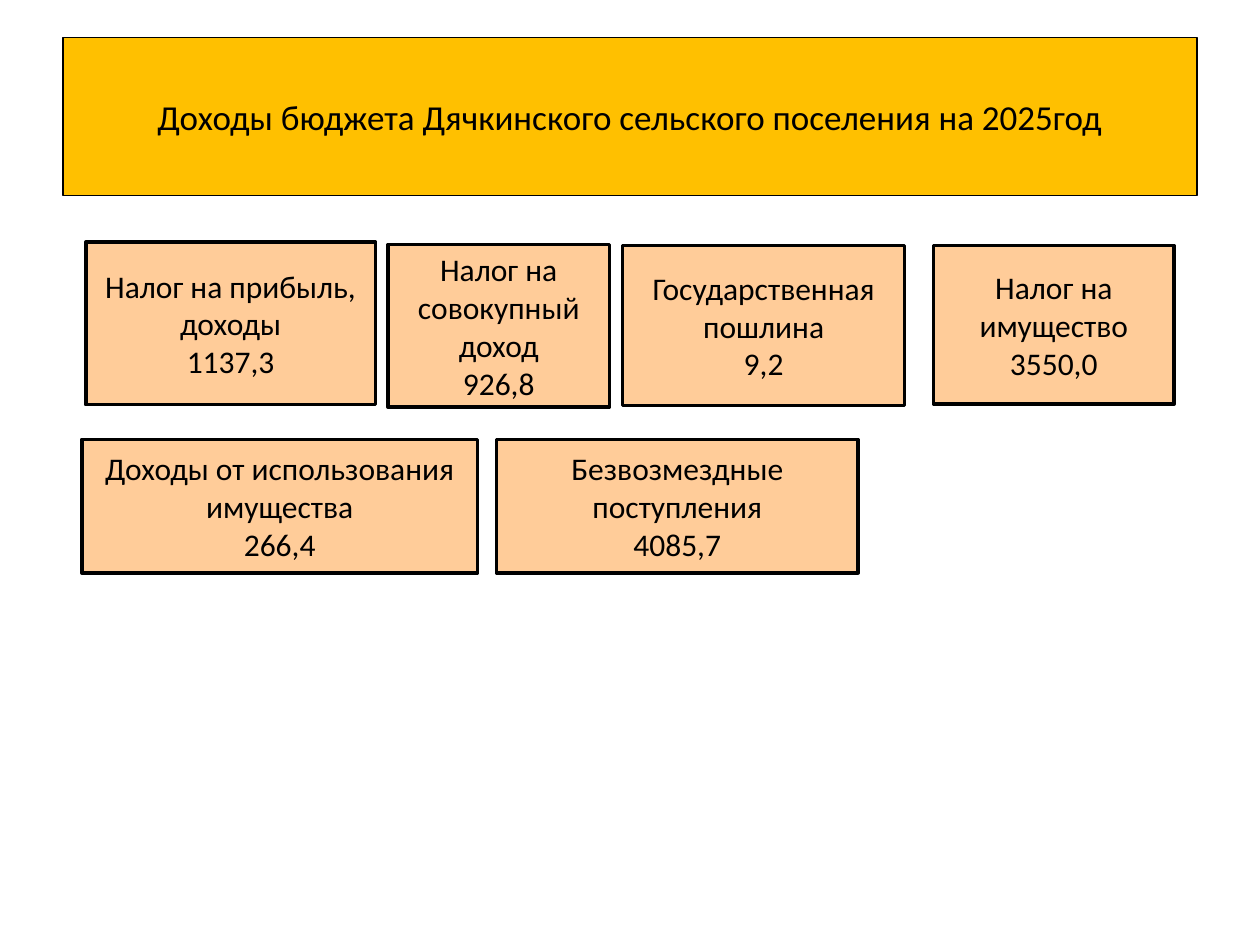
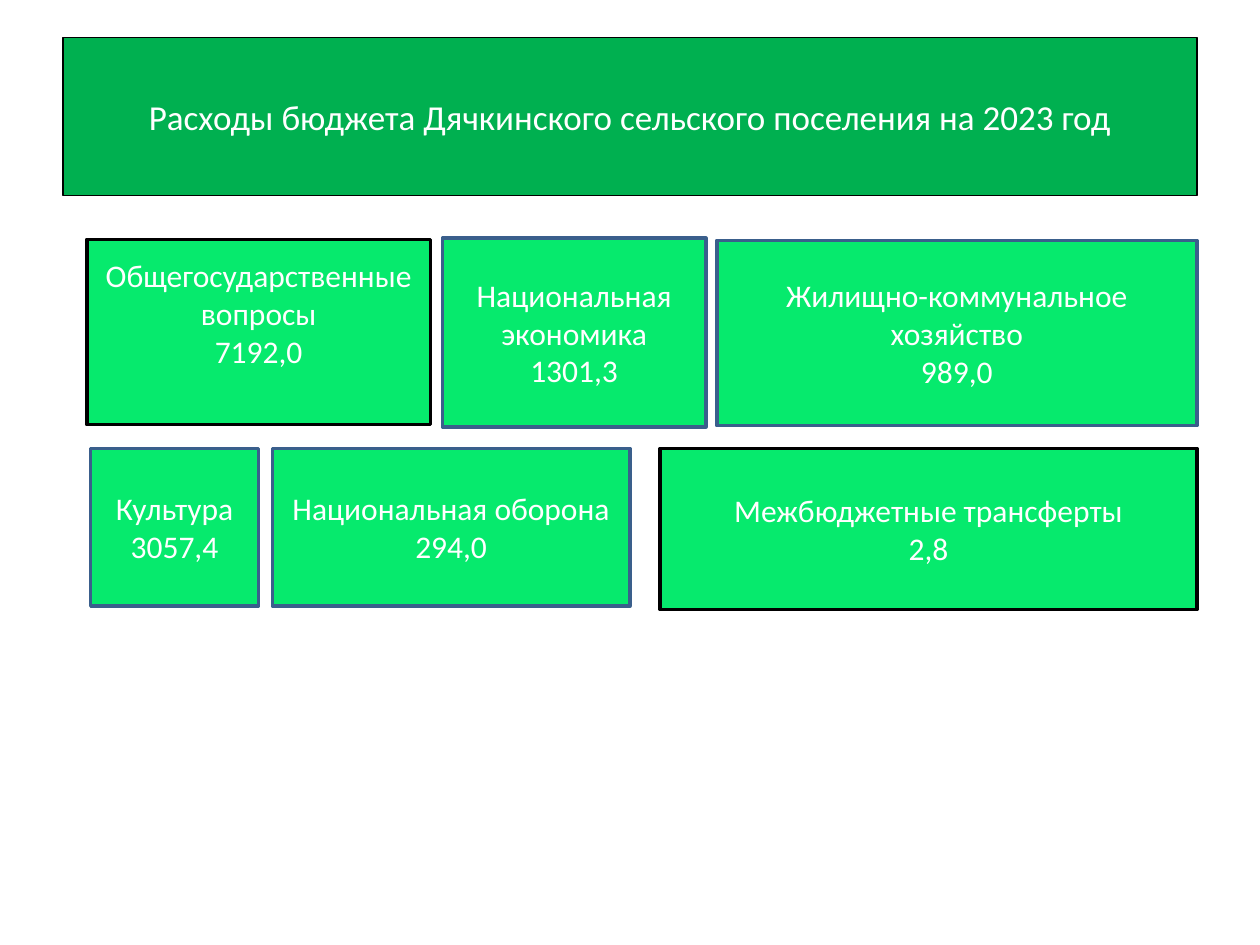
from pptx import Presentation
from pptx.dml.color import RGBColor
from pptx.enum.shapes import MSO_SHAPE
from pptx.enum.text import MSO_ANCHOR, PP_ALIGN
from pptx.util import Cm, Pt

COLORS = {
    "black": "000000",
    "white": "FFFFFF",
    "amber": "FFC000",
    "peach": "FFCC99",
    "green": "00B050",
    "mint": "06EA6D",
    "blue": "3A5F8C",
}

INCOME = [
    ("Налог на прибыль, доходы\n1137,3", (1.73, 4.88, 5.84, 3.28)),
    ("Налог на совокупный доход\n926,8", (7.82, 4.93, 4.47, 3.28)),
    ("Государственная пошлина\n9,2", (12.55, 4.95, 5.69, 3.23)),
    ("Налог на имущество\n3550,0", (18.82, 4.95, 4.85, 3.2)),
    ("Доходы от использования имущества\n266,4", (1.65, 8.86, 7.98, 2.69)),
    ("Безвозмездные поступления\n4085,7", (10.01, 8.86, 7.29, 2.69)),
]

EXPENSES = [
    ("Общегосударственные вопросы\n7192,0", (1.75, 4.83, 6.93, 3.73), "black", 0.9),
    ("Национальная экономика\n1301,3", (8.92, 4.8, 5.31, 3.81), "blue"),
    ("Жилищно-коммунальное хозяйство\n989,0", (14.45, 4.85, 9.68, 3.73), "blue"),
    ("Культура\n3057,4", (1.83, 9.04, 3.38, 3.18), "blue"),
    ("Межбюджетные трансферты\n2,8", (13.31, 9.04, 10.82, 3.25), "black"),
    ("Национальная оборона 294,0", (5.49, 9.04, 7.21, 3.18), "blue"),
]


class BudgetDeck:
    """Builds budget slides with a coloured title band and labelled boxes."""

    def __init__(self):
        self.deck = Presentation()
        self.deck.slide_width, self.deck.slide_height = Cm(25.4), Cm(19.05)

    def page(self, title, band_color, box_color, text_color):
        self.slide = self.deck.slides.add_slide(self.deck.slide_layouts[6])
        self.box_color, self.text_color = box_color, text_color
        self.rectangle(title, (1.27, 0.76, 22.86, 3.18), band_color, "black", 0.75, 20)

    def box(self, text, place, line_color="black", bottom_margin=0.13):
        shape = self.rectangle(text, place, self.box_color, line_color, 2, 18)
        shape.text_frame.margin_bottom = Cm(bottom_margin)

    def rectangle(self, text, place, fill, line_color, line_width, size):
        shape = self.slide.shapes.add_shape(MSO_SHAPE.RECTANGLE, *map(Cm, place))
        shape.shadow.inherit = False
        shape.fill.solid()
        shape.fill.fore_color.rgb = RGBColor.from_string(COLORS[fill])
        shape.line.color.rgb = RGBColor.from_string(COLORS[line_color])
        shape.line.width = Pt(line_width)
        frame = shape.text_frame
        frame.text = text
        frame.word_wrap = True
        frame.vertical_anchor = MSO_ANCHOR.MIDDLE
        for paragraph in frame.paragraphs:
            paragraph.alignment = PP_ALIGN.CENTER
            paragraph.font.name = "Calibri"
            paragraph.font.size = Pt(size)
            paragraph.font.color.rgb = RGBColor.from_string(COLORS[self.text_color])
        return shape


def main():
    budget = BudgetDeck()
    budget.page("Доходы бюджета Дячкинского сельского поселения на 2025год",
                "amber", "peach", "black")
    for item in INCOME:
        budget.box(*item)
    budget.page("Расходы бюджета Дячкинского сельского поселения на 2023 год",
                "green", "mint", "white")
    for item in EXPENSES:
        budget.box(*item)
    budget.deck.save("out.pptx")


if __name__ == "__main__":
    main()
